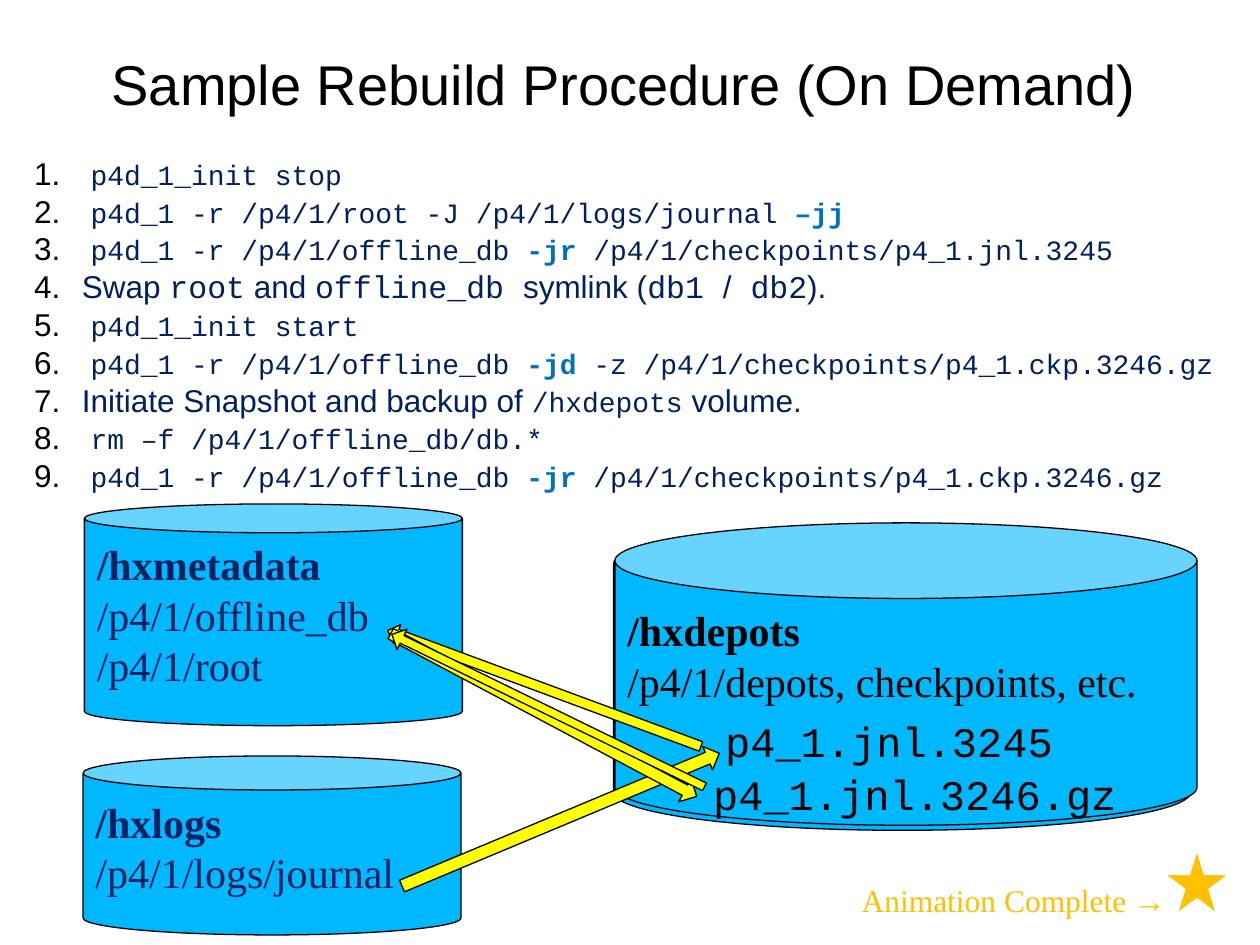
from lxml import etree
from pptx import Presentation
from pptx import util as u
from pptx.dml.color import RGBColor
from pptx.enum import shapes, text
from pptx.oxml.ns import qn

COLORS = {
    "navy": "002060", "blue": "0070C0", "black": "000000", "white": "FFFFFF",
    "can": "00B8FF", "arrow": "FFFF00", "gold": "FFC000",
}
SANS, MONO, SERIF = "Arial", "Courier New", "Times New Roman"
PLAIN = (SANS, 18, "navy", False)
CODE = (MONO, 16, "navy", False)
BIG_CODE = (MONO, 18, "navy", False)
FLAG = (MONO, 16, "blue", True)


class SlideBuilder:
    def __init__(self, page):
        self.page = page

    def place(self, box, left, top, width, height):
        box.left, box.top = u.Inches(left), u.Inches(top)
        box.width, box.height = u.Inches(width), u.Inches(height)

    def style(self, font, name, size, color, bold=False):
        font.name, font.size, font.bold = name, u.Pt(size), bold
        font.color.rgb = RGBColor.from_string(COLORS[color])

    def title(self, words, *bounds):
        box = self.page.shapes.title
        self.place(box, *bounds)
        frame = box.text_frame
        frame.text = words
        frame.auto_size = text.MSO_AUTO_SIZE.NONE
        frame.vertical_anchor = text.MSO_ANCHOR.MIDDLE
        para = frame.paragraphs[0]
        para.alignment = text.PP_ALIGN.CENTER
        self.style(para.font, SANS, 32, "black")

    def number(self, para):
        props = para._p.get_or_add_pPr()
        props.set("marL", str(u.Inches(0.38)))
        props.set("indent", str(-u.Inches(0.38)))
        color = etree.SubElement(props, qn("a:buClr"))
        etree.SubElement(color, qn("a:srgbClr"), val=COLORS["black"])
        etree.SubElement(props, qn("a:buFont"), typeface=SANS)
        etree.SubElement(props, qn("a:buAutoNum"), type="arabicPeriod")

    def steps(self, rows, *bounds):
        box = self.page.placeholders[1]
        self.place(box, *bounds)
        frame = box.text_frame
        frame.auto_size = text.MSO_AUTO_SIZE.NONE
        frame.vertical_anchor = text.MSO_ANCHOR.TOP
        frame.margin_top = u.Inches(0.28)
        for index, row in enumerate(rows):
            para = frame.add_paragraph() if index else frame.paragraphs[0]
            para.line_spacing = 1.0
            para.space_before = u.Pt(0)
            self.number(para)
            for words, look in row:
                span = para.add_run()
                span.text = words
                self.style(span.font, *look)

    def shape(self, kind, bounds, fill, line="black", rotation=0, adjust=None):
        box = self.page.shapes.add_shape(kind, *map(u.Inches, bounds))
        box.shadow.inherit = False
        box.fill.solid()
        box.fill.fore_color.rgb = RGBColor.from_string(COLORS[fill])
        box.line.color.rgb = RGBColor.from_string(COLORS[line])
        box.line.width = u.Pt(0.75)
        box.rotation = rotation
        if adjust is not None:
            box.adjustments[0] = adjust
        return box

    def can(self, lines, bounds, adjust, color):
        box = self.shape(shapes.MSO_SHAPE.CAN, bounds, "can", adjust=adjust)
        frame = box.text_frame
        frame.text = "\n".join(lines)
        frame.word_wrap = True
        frame.vertical_anchor = text.MSO_ANCHOR.TOP
        for index, para in enumerate(frame.paragraphs):
            para.alignment = text.PP_ALIGN.LEFT
            self.style(para.font, SERIF, 24, color, index == 0)

    def arrow(self, bounds, rotation, adjust=0.5):
        self.shape(shapes.MSO_SHAPE.DOWN_ARROW, bounds, "arrow",
                   rotation=rotation, adjust=adjust)

    def star(self, *bounds):
        self.shape(shapes.MSO_SHAPE.STAR_5_POINT, bounds, "gold", "white")

    def label(self, words, bounds, look, align=text.PP_ALIGN.CENTER):
        box = self.page.shapes.add_textbox(*map(u.Inches, bounds))
        frame = box.text_frame
        frame.word_wrap = True
        frame.text = words
        para = frame.paragraphs[0]
        para.alignment = align
        self.style(para.font, *look)


def command(before, flag="", after=""):
    parts = [(" ", PLAIN), (before, CODE), (flag, FLAG), (after, CODE)]
    return [part for part in parts if part[0]]


def main():
    deck = Presentation()
    deck.slide_width, deck.slide_height = u.Inches(10), u.Inches(7.5)
    builder = SlideBuilder(deck.slides.add_slide(deck.slide_layouts[1]))

    builder.title("Sample Rebuild Procedure (On Demand)", 0.33, 0.33, 9.25, 0.66)
    offline = "p4d_1 -r /p4/1/offline_db "
    builder.steps([
        command("p4d_1_init stop"),
        command("p4d_1 -r /p4/1/root -J /p4/1/logs/journal ", "–jj"),
        command(offline, "-jr", " /p4/1/checkpoints/p4_1.jnl.3245"),
        [("Swap ", PLAIN), ("root", BIG_CODE), (" and ", PLAIN),
         ("offline_db ", BIG_CODE), ("symlink (", PLAIN), ("db1 ", BIG_CODE),
         ("/", PLAIN), (" db2", BIG_CODE), (").", PLAIN)],
        command("p4d_1_init start"),
        command(offline, "-jd ", "-z /p4/1/checkpoints/p4_1.ckp.3246.gz"),
        [("Initiate Snapshot and backup of ", PLAIN), ("/hxdepots", CODE),
         (" volume.", PLAIN)],
        command("rm –f /p4/1/offline_db/db.*"),
        command(offline, "-jr ", "/p4/1/checkpoints/p4_1.ckp.3246.gz"),
    ], 0.17, 0.94, 9.83, 3.37)

    builder.can(["/hxlogs", "/p4/1/logs/journal"],
                (0.66, 6, 3, 1.42), 0.19, "navy")
    builder.can(["/hxmetadata", "/p4/1/offline_db", "/p4/1/root"],
                (0.67, 4, 3, 1.76), 0.13, "navy")
    for bounds in [(4.87, 4.17, 4.58, 2.42), (4.88, 4.15, 4.62, 2.4)]:
        builder.can(["/hxdepots", "/p4/1/depots, checkpoints, etc."],
                    bounds, 0.25, "black")

    builder.arrow((4.35, 5.14, 0.2, 2.73), 247.3)
    builder.arrow((4.24, 4.14, 0.16, 2.65), 110.3)
    builder.arrow((4.21, 4.3, 0.21, 2.75), 298, 0.44)
    file_look = (MONO, 24, "black")
    builder.label("p4_1.jnl.3245", (5.64, 5.63, 2.83, 0.5), file_look)
    builder.label("p4_1.jnl.3246.gz", (5.51, 6.05, 3.5, 0.5), file_look)
    builder.arrow((4.26, 4.26, 0.18, 2.76), 116, 0.37)

    builder.star(9.25, 6.75, 0.5, 0.5)
    builder.label("Animation Complete →", (6.74, 6.94, 2.84, 0.4),
                  (SERIF, 18, "gold"), text.PP_ALIGN.LEFT)
    deck.save("out.pptx")


if __name__ == "__main__":
    main()
